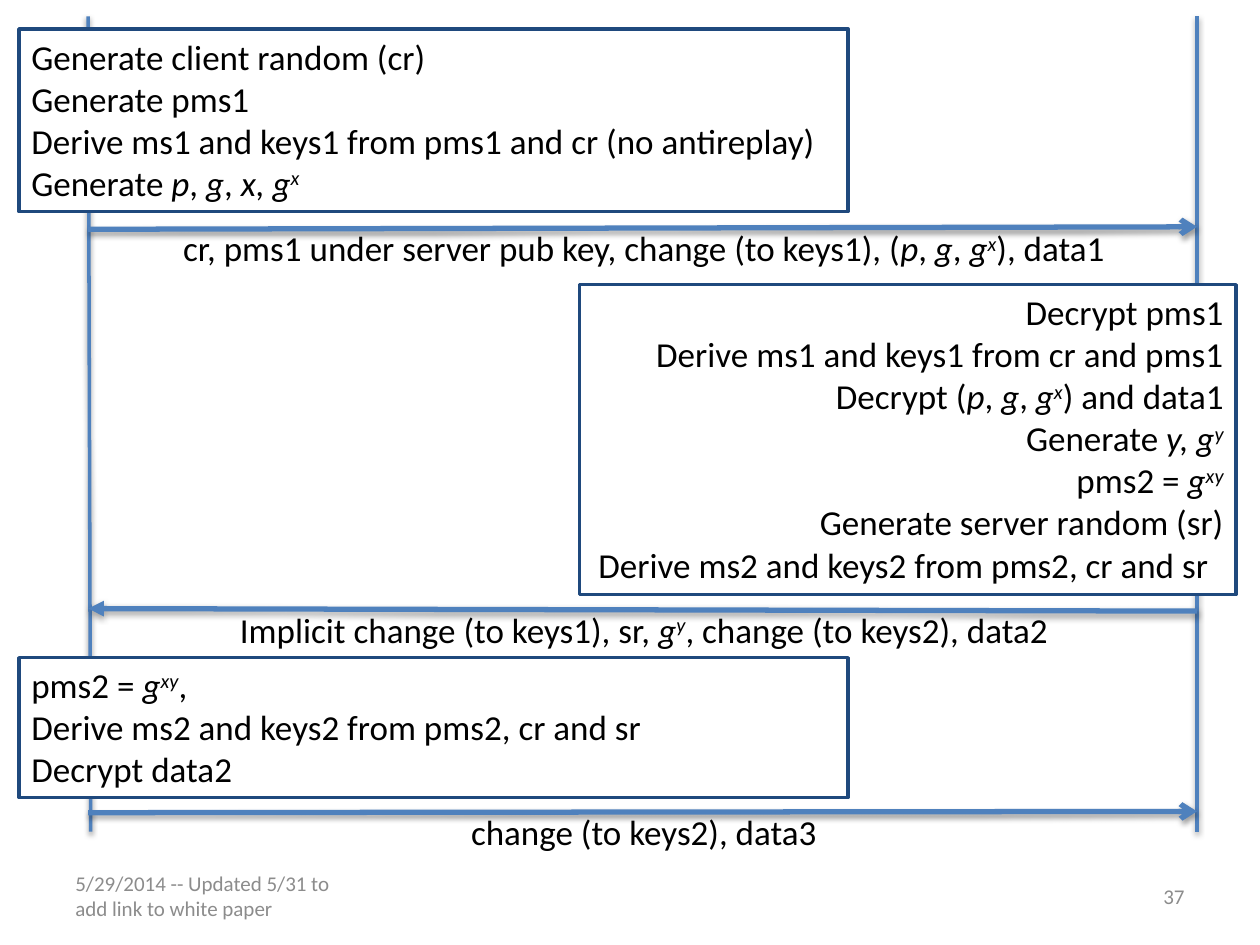
from lxml import etree
from pptx import Presentation
from pptx.dml.color import RGBColor
from pptx.enum.shapes import MSO_CONNECTOR, MSO_SHAPE
from pptx.enum.text import MSO_ANCHOR, MSO_AUTO_SIZE, PP_ALIGN
from pptx.oxml import parse_xml
from pptx.oxml.ns import nsdecls, qn
from pptx.util import Inches, Pt

BLUE = RGBColor(0x4F, 0x81, 0xBD)
NAVY = RGBColor(0x1F, 0x49, 0x7D)
WHITE = RGBColor(0xFF, 0xFF, 0xFF)
BLACK = RGBColor(0x00, 0x00, 0x00)
GREY = RGBColor(0x8C, 0x8C, 0x8C)

CLIENT_X, SERVER_X = 0.7, 9.5
LIFELINE_TOP, LIFELINE_BOTTOM = 0.13, 6.6

# In these texts *...* is italic and ^...^ is superscript.
# Message: y at the client, y at the server, label top, to server?, arrowhead, label
MESSAGES = [
    (1.82, 1.8, 1.75, True, "arrow",
     "cr, pms1 under server pub key, change (to keys1), (*p*, *g*, *g^x^*), data1"),
    (4.83, 4.85, 4.78, False, "triangle",
     "Implicit change (to keys1), sr, *g^y^*, change (to keys2), data2"),
    (6.45, 6.44, 6.38, True, "arrow", "change (to keys2), data3"),
]

CLIENT_HELLO = [
    "Generate client random (cr)",
    "Generate pms1",
    "Derive ms1 and keys1 from pms1 and cr (no antireplay)",
    "Generate *p*, *g*, *x, g^x^*",
]
SERVER_REPLY = [
    "Decrypt pms1",
    "Derive ms1 and keys1 from cr and pms1",
    "Decrypt (*p*, *g*, *g^x^*) and data1",
    "Generate *y, g^y^*",
    "pms2 = *g^xy^*",
    "Generate server random (sr)",
    "Derive ms2 and keys2 from pms2, cr and sr",
]
CLIENT_FINISH = [
    "pms2 = *g^xy^*,",
    "Derive ms2 and keys2 from pms2, cr and sr",
    "Decrypt data2",
]


def add_marked_runs(paragraph, marked, size, color):
    """Add runs, reading *...* as italic and ^...^ as superscript."""
    for i, part in enumerate(marked.split("*")):
        for j, text in enumerate(part.split("^")):
            if not text:
                continue
            run = paragraph.add_run()
            run.text = text
            font = run.font
            font.name, font.size = "Calibri", Pt(size)
            font.color.rgb = color
            if i % 2:
                font.italic = True
            if j % 2:
                run._r.get_or_add_rPr().set("baseline", "30000")


def write_lines(shape, lines, align, size=20, color=BLACK):
    text_frame = shape.text_frame
    text_frame.word_wrap = True
    for index, line in enumerate(lines):
        paragraph = text_frame.paragraphs[0] if index == 0 else text_frame.add_paragraph()
        paragraph.alignment = align
        add_marked_runs(paragraph, line, size, color)


def add_text(slide, box, line, align, size=20, color=BLACK):
    text_box = slide.shapes.add_textbox(*map(Inches, box))
    write_lines(text_box, [line], align, size, color)
    return text_box


def add_line(slide, start, end, width, arrowhead=None):
    connector = slide.shapes.add_connector(
        MSO_CONNECTOR.STRAIGHT, *map(Inches, (*start, *end)))
    connector.line.color.rgb = BLUE
    connector.line.width = Pt(width)
    if arrowhead:
        etree.SubElement(connector.line._get_or_add_ln(), qn("a:tailEnd"), type=arrowhead)
    connector._element.spPr.append(parse_xml(
        f'<a:effectLst {nsdecls("a")}>'
        '<a:outerShdw blurRad="40000" dist="20000" dir="5400000" rotWithShape="0">'
        '<a:srgbClr val="000000"><a:alpha val="38000"/></a:srgbClr>'
        '</a:outerShdw></a:effectLst>'))


def add_message(slide, client_y, server_y, label_top, to_server, arrowhead, label):
    ends = [(CLIENT_X, client_y), (SERVER_X, server_y)]
    start, end = ends if to_server else reversed(ends)
    add_line(slide, start, end, 3, arrowhead)
    add_text(slide, (0.72, label_top, 8.78, 0.44), label, PP_ALIGN.CENTER)


def add_steps(slide, box, lines, align=PP_ALIGN.LEFT):
    """Add the framed list of what one side computes."""
    shape = slide.shapes.add_shape(MSO_SHAPE.RECTANGLE, *map(Inches, box))
    shape.shadow.inherit = False
    shape.fill.solid()
    shape.fill.fore_color.rgb = WHITE
    shape.line.color.rgb = NAVY
    shape.line.width = Pt(2)
    shape.text_frame.vertical_anchor = MSO_ANCHOR.TOP
    write_lines(shape, lines, align)
    shape.text_frame.auto_size = MSO_AUTO_SIZE.SHAPE_TO_FIT_TEXT
    return shape


def add_footer(slide, top):
    for left, text, align in (
        (0.5, "5/29/2014 -- Updated 5/31 to add link to white paper", PP_ALIGN.LEFT),
        (7.17, "37", PP_ALIGN.RIGHT),
    ):
        footer = add_text(slide, (left, top, 2.33, 0.4), text, align, 12, GREY)
        footer.text_frame.vertical_anchor = MSO_ANCHOR.MIDDLE


def main():
    presentation = Presentation()
    presentation.slide_width, presentation.slide_height = Inches(10), Inches(7.5)
    slide = presentation.slides.add_slide(presentation.slide_layouts[6])

    add_footer(slide, 6.91)
    add_line(slide, (CLIENT_X, LIFELINE_TOP), (CLIENT_X + 0.02, LIFELINE_BOTTOM), 2)
    add_line(slide, (SERVER_X, LIFELINE_TOP), (SERVER_X, LIFELINE_BOTTOM), 2)
    for message in MESSAGES:
        add_message(slide, *message)

    add_steps(slide, (0.15, 0.23, 6.58, 1.45), CLIENT_HELLO)
    server_steps = add_steps(slide, (4.6, 2.26, 5.21, 2.46), SERVER_REPLY, PP_ALIGN.RIGHT)
    last_step = server_steps.text_frame.paragraphs[-1]
    last_step._p.get_or_add_pPr().set("marR", str(Inches(0.12)))
    add_steps(slide, (0.15, 5.22, 6.58, 1.11), CLIENT_FINISH)

    presentation.save("out.pptx")


if __name__ == "__main__":
    main()
